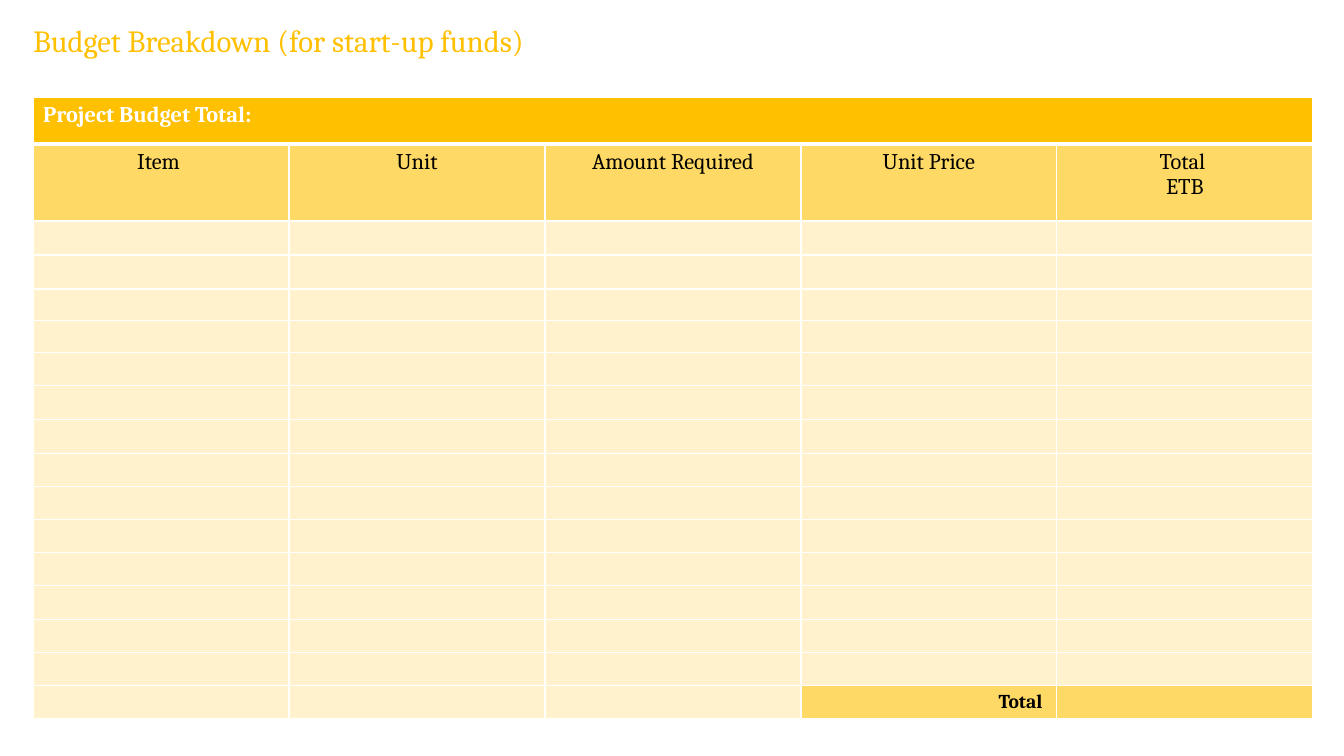
from lxml import etree
from pptx import Presentation
from pptx.dml.color import RGBColor
from pptx.enum.text import MSO_ANCHOR, MSO_AUTO_SIZE, PP_ALIGN
from pptx.oxml.ns import qn
from pptx.util import Emu, Pt

LEFT, CENTER, RIGHT = PP_ALIGN.LEFT, PP_ALIGN.CENTER, PP_ALIGN.RIGHT
MIDDLE = MSO_ANCHOR.MIDDLE
NO_AUTOFIT = MSO_AUTO_SIZE.NONE

FONT = "Cambria"
GOLD, AMBER, CREAM = "FFC000", "FFD966", "FFF2CC"
WHITE, BLACK = "FFFFFF", "000000"

TITLE = "Budget Breakdown (for start-up funds)"
BUDGET_LABEL = "Project Budget Total:"
HEADINGS = [["Item "], ["Unit"], ["Amount Required"], ["Unit Price"], ["Total ", "ETB"]]
TOTAL_LABEL = "Total "

SLIDE_W, SLIDE_H = 1344, 756
TITLE_BOX = (33, 24, 1199, 37)
TABLE_LEFT, TABLE_TOP = 33, 97
COL_W = 256
ROW_HEIGHTS = [47, 77, 34, 34, 32, 32, 33, 34, 34, 33, 33, 33, 33, 34, 33, 33, 33]
LAST_ROW = len(ROW_HEIGHTS) - 1
TOTAL_COL = 3


def px(n):
    return Emu(round(n * 914400 / 100.8))


def rgb(value):
    return RGBColor.from_string(value)


def add_run(p, text, size, color, bold=False):
    r = p.add_run()
    r.text = text
    r.font.name = FONT
    r.font.size = Pt(size)
    r.font.bold = bold
    r.font.color.rgb = rgb(color)


def write_cell(cell, lines, size, color, bold, align):
    tf = cell.text_frame
    for i, line in enumerate(lines):
        p = tf.add_paragraph() if i else tf.paragraphs[0]
        p.alignment = align
        add_run(p, line, size, color, bold)


def set_borders(cell, bottom, top):
    tc_pr = cell._tc.get_or_add_tcPr()
    for side, width in (("L", 1), ("R", 1), ("T", top), ("B", bottom)):
        ln = etree.SubElement(tc_pr, qn(f"a:ln{side}"), w=str(Pt(width)))
        fill = etree.SubElement(ln, qn("a:solidFill"))
        etree.SubElement(fill, qn("a:srgbClr"), val=WHITE)


def cell_fill(row, col):
    if row == 0:
        return GOLD
    if row == 1 or (row == LAST_ROW and col >= TOTAL_COL):
        return AMBER
    return CREAM


def add_title(s):
    sp = s.shapes.title
    sp.left, sp.top, sp.width, sp.height = map(px, TITLE_BOX)
    tf = sp.text_frame
    tf.margin_left = tf.margin_right = tf.margin_top = tf.margin_bottom = 0
    tf.word_wrap = True
    tf.auto_size = NO_AUTOFIT
    tf.vertical_anchor = MIDDLE
    p = tf.paragraphs[0]
    p.alignment = LEFT
    p.line_spacing = 0.9
    add_run(p, TITLE, 22, GOLD)


def add_budget_table(s):
    cols = len(HEADINGS)
    frame = s.shapes.add_table(len(ROW_HEIGHTS), cols, px(TABLE_LEFT), px(TABLE_TOP),
                               px(COL_W * cols), px(sum(ROW_HEIGHTS)))
    table = frame.table
    for column in table.columns:
        column.width = px(COL_W)
    for row, height in enumerate(ROW_HEIGHTS):
        table.rows[row].height = px(height)
        for col in range(cols):
            cell = table.cell(row, col)
            set_borders(cell, 3 if row == 0 else 1, 3 if row == 1 else 1)
            cell.fill.solid()
            cell.fill.fore_color.rgb = rgb(cell_fill(row, col))
            end = etree.SubElement(cell.text_frame.paragraphs[0]._p, qn("a:endParaRPr"))
            end.set("sz", "1200")

    table.cell(0, 0).merge(table.cell(0, cols - 1))
    write_cell(table.cell(0, 0), [BUDGET_LABEL], 16, WHITE, True, LEFT)
    for col, lines in enumerate(HEADINGS):
        write_cell(table.cell(1, col), lines, 16, BLACK, False, CENTER)
    write_cell(table.cell(LAST_ROW, TOTAL_COL), [TOTAL_LABEL], 14, BLACK, True, RIGHT)


def main():
    prs = Presentation()
    prs.slide_width, prs.slide_height = px(SLIDE_W), px(SLIDE_H)
    s = prs.slides.add_slide(prs.slide_layouts[5])
    add_title(s)
    add_budget_table(s)
    prs.save("out.pptx")


if __name__ == "__main__":
    main()
